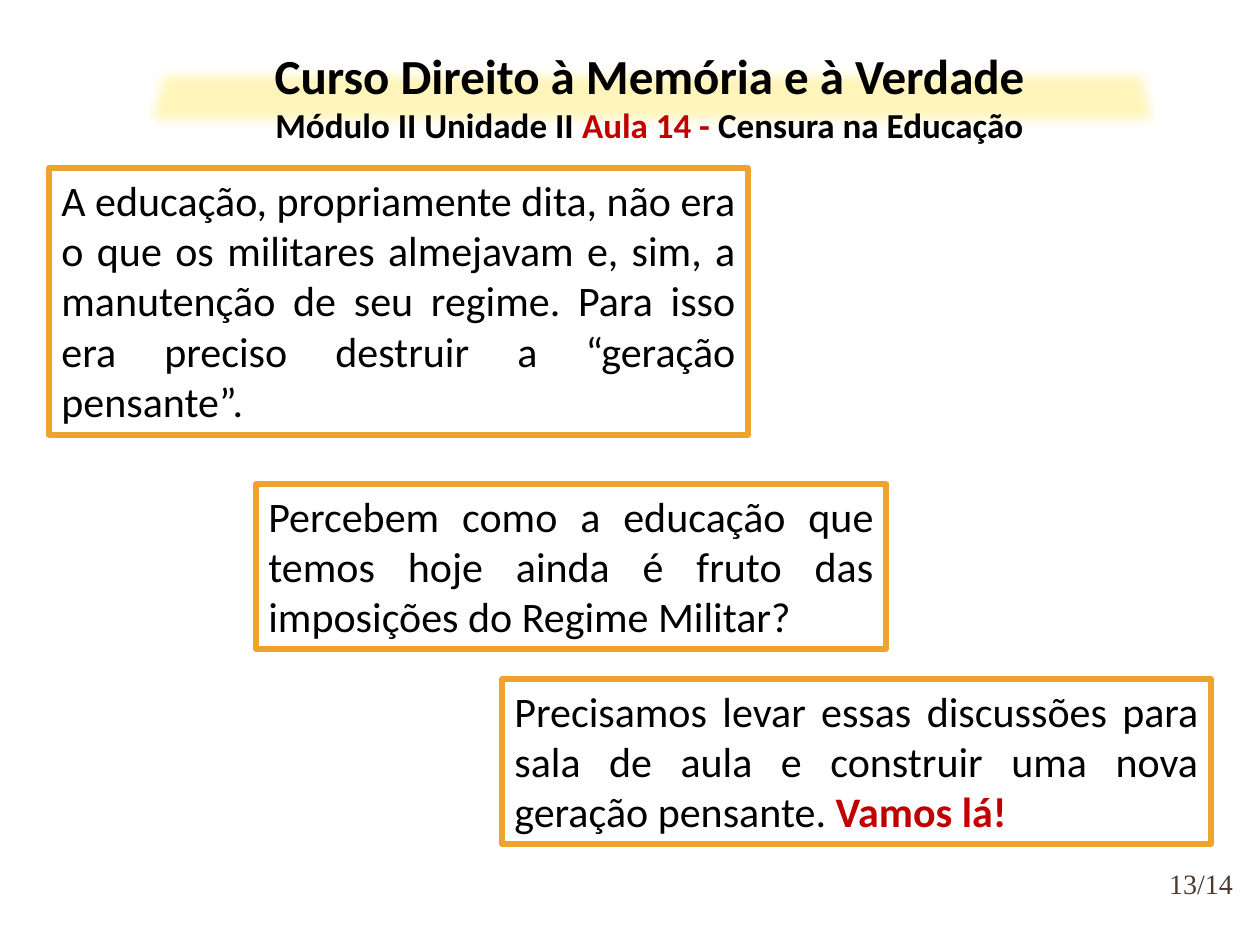
import lxml.etree
import pptx
import pptx.dml.color
import pptx.enum.shapes
import pptx.enum.text
import pptx.oxml.ns
import pptx.util
from dataclasses import dataclass

ALIGN = pptx.enum.text.PP_ALIGN
ANCHOR = pptx.enum.text.MSO_ANCHOR
SHAPE = pptx.enum.shapes.MSO_SHAPE


@dataclass(frozen=True)
class Theme:
    body_font: str = "Calibri"
    number_font: str = "Times New Roman"
    ink: str = "000000"
    accent: str = "C00000"
    paper: str = "FFFFFF"
    border: str = "F0A22E"
    band: str = "FFF5BB"
    number: str = "4E3B30"
    title_size: int = 28
    subtitle_size: int = 20
    body_size: int = 24
    number_size: int = 16
    border_width: int = 3


THEME = Theme()


def px(length):
    return pptx.util.Emu(round(length * 914400 / 126))


def rgb(value):
    return pptx.dml.color.RGBColor.from_string(value)


def add_run(paragraph, text, size, color=THEME.ink, bold=False, font=THEME.body_font):
    run = paragraph.add_run()
    run.text = text
    run.font.name = font
    run.font.size = pptx.util.Pt(size)
    run.font.bold = bold
    run.font.color.rgb = rgb(color)


def add_shape(slide, kind, box, fill):
    shape = slide.shapes.add_shape(kind, *map(px, box))
    shape.shadow.inherit = False
    shape.fill.solid()
    shape.fill.fore_color.rgb = rgb(fill)
    return shape


def add_soft_band(slide, box, blur):
    band = add_shape(slide, SHAPE.TRAPEZOID, box, THEME.band)
    band.line.fill.background()
    effects = band._element.spPr.find(pptx.oxml.ns.qn("a:effectLst"))
    soft_edge = lxml.etree.SubElement(effects, pptx.oxml.ns.qn("a:softEdge"))
    soft_edge.set("rad", str(px(blur)))


def add_statement(slide, box, *parts):
    statement = add_shape(slide, SHAPE.RECTANGLE, box, THEME.paper)
    statement.line.color.rgb = rgb(THEME.border)
    statement.line.width = pptx.util.Pt(THEME.border_width)
    frame = statement.text_frame
    frame.word_wrap = True
    frame.vertical_anchor = ANCHOR.TOP
    paragraph = frame.paragraphs[0]
    paragraph.alignment = ALIGN.JUSTIFY
    for text, color, bold in parts:
        add_run(paragraph, text, THEME.body_size, color, bold)


def add_heading(slide, box):
    frame = slide.shapes.add_textbox(*map(px, box)).text_frame
    frame.word_wrap = True
    title = frame.paragraphs[0]
    subtitle = frame.add_paragraph()
    title.alignment = subtitle.alignment = ALIGN.CENTER
    add_run(title, "Curso Direito à Memória e à Verdade", THEME.title_size, bold=True)
    for text, color in (
        ("Módulo II Unidade II ", THEME.ink),
        ("Aula 14 - ", THEME.accent),
        ("Censura na Educação", THEME.ink),
    ):
        add_run(subtitle, text, THEME.subtitle_size, color, bold=True)


def add_page_number(slide, box, text):
    frame = slide.shapes.add_textbox(*map(px, box)).text_frame
    frame.margin_left = frame.margin_right = frame.margin_top = frame.margin_bottom = 0
    frame.word_wrap = True
    frame.vertical_anchor = ANCHOR.MIDDLE
    paragraph = frame.paragraphs[0]
    paragraph.alignment = ALIGN.CENTER
    add_run(paragraph, text, THEME.number_size, THEME.number, font=THEME.number_font)


def main():
    deck = pptx.Presentation()
    deck.slide_width, deck.slide_height = px(1260), px(945)
    slide = deck.slides.add_slide(deck.slide_layouts[6])

    # Page number
    add_page_number(slide, (1159, 852, 84, 63), "13/14")

    # Statements, stepping down to the right
    add_statement(
        slide, (49, 168, 699, 267),
        ("A educação, propriamente dita, não era o que os militares almejavam e, sim, "
         "a manutenção de seu regime. Para isso era preciso destruir a “geração pensante”.",
         THEME.ink, False),
    )
    add_statement(
        slide, (256, 484, 630, 165),
        ("Percebem como a educação que temos hoje ainda é fruto das imposições do "
         "Regime Militar?", THEME.ink, False),
    )
    add_statement(
        slide, (502, 679, 709, 165),
        ("Precisamos levar essas discussões para sala de aula e construir uma nova "
         "geração pensante. ", THEME.ink, False),
        ("Vamos lá!", THEME.accent, True),
    )

    # Heading over its soft yellow band
    add_soft_band(slide, (138, 67, 1026, 62), 10)
    add_heading(slide, (128, 39, 1043, 115))

    deck.save("out.pptx")


if __name__ == "__main__":
    main()
